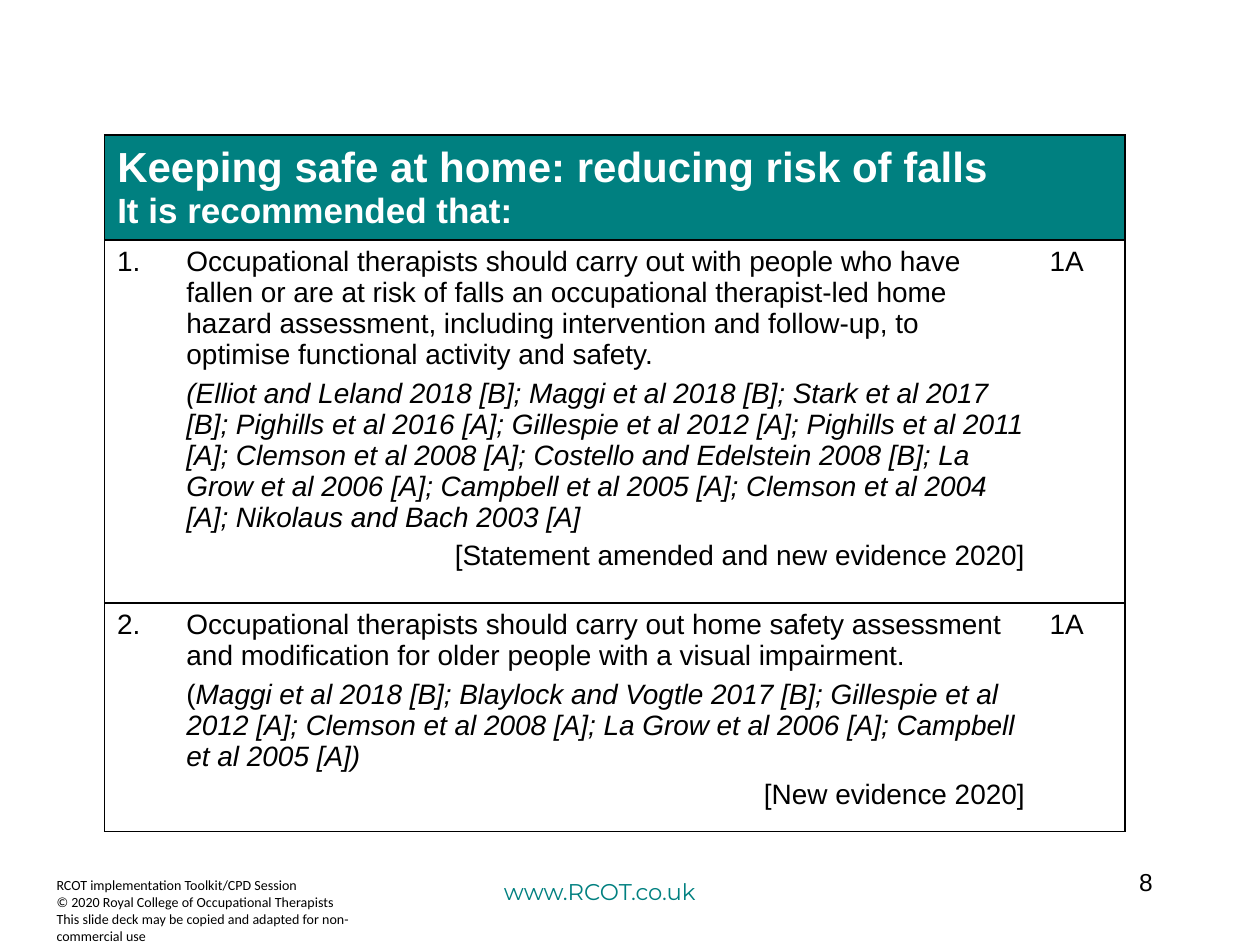
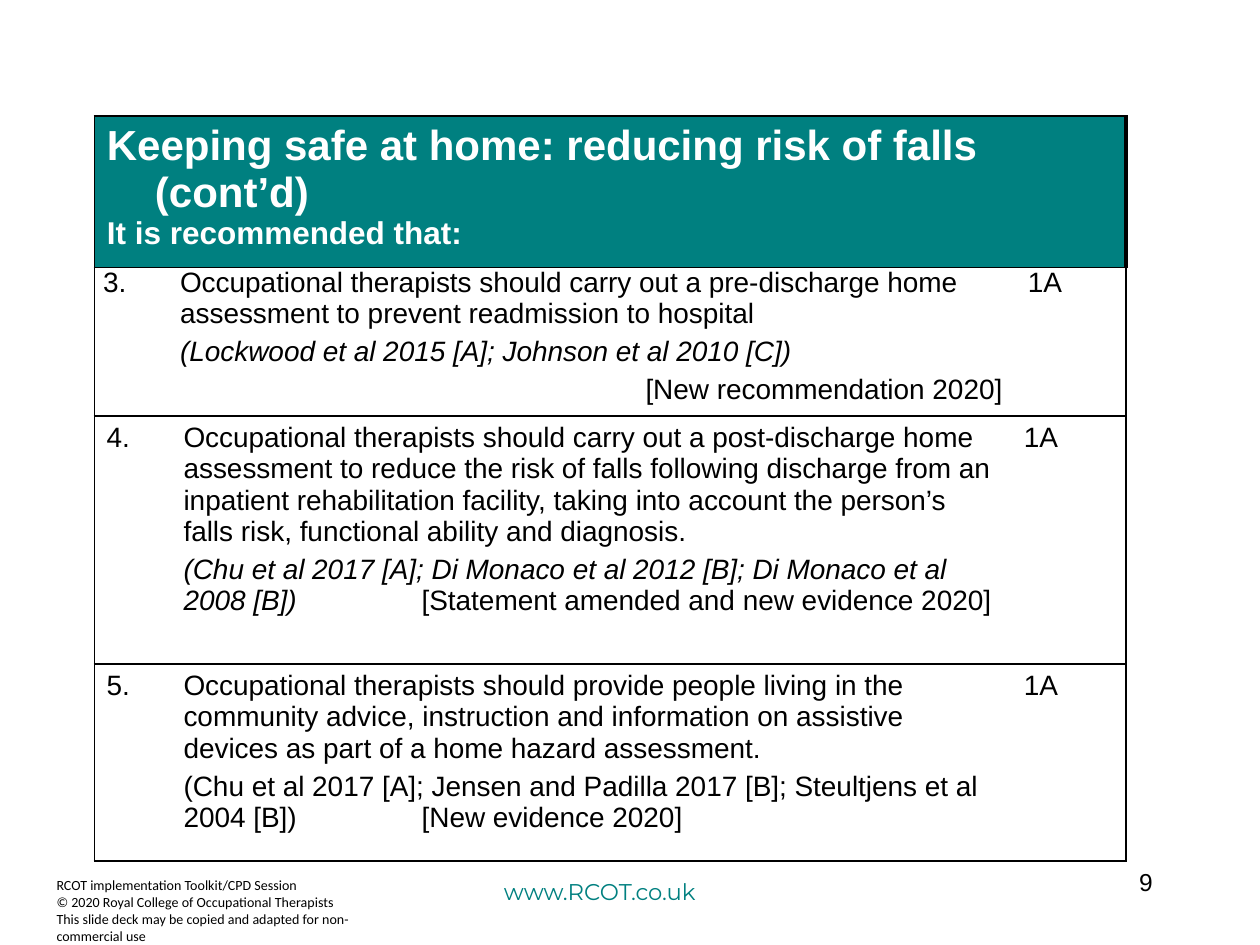
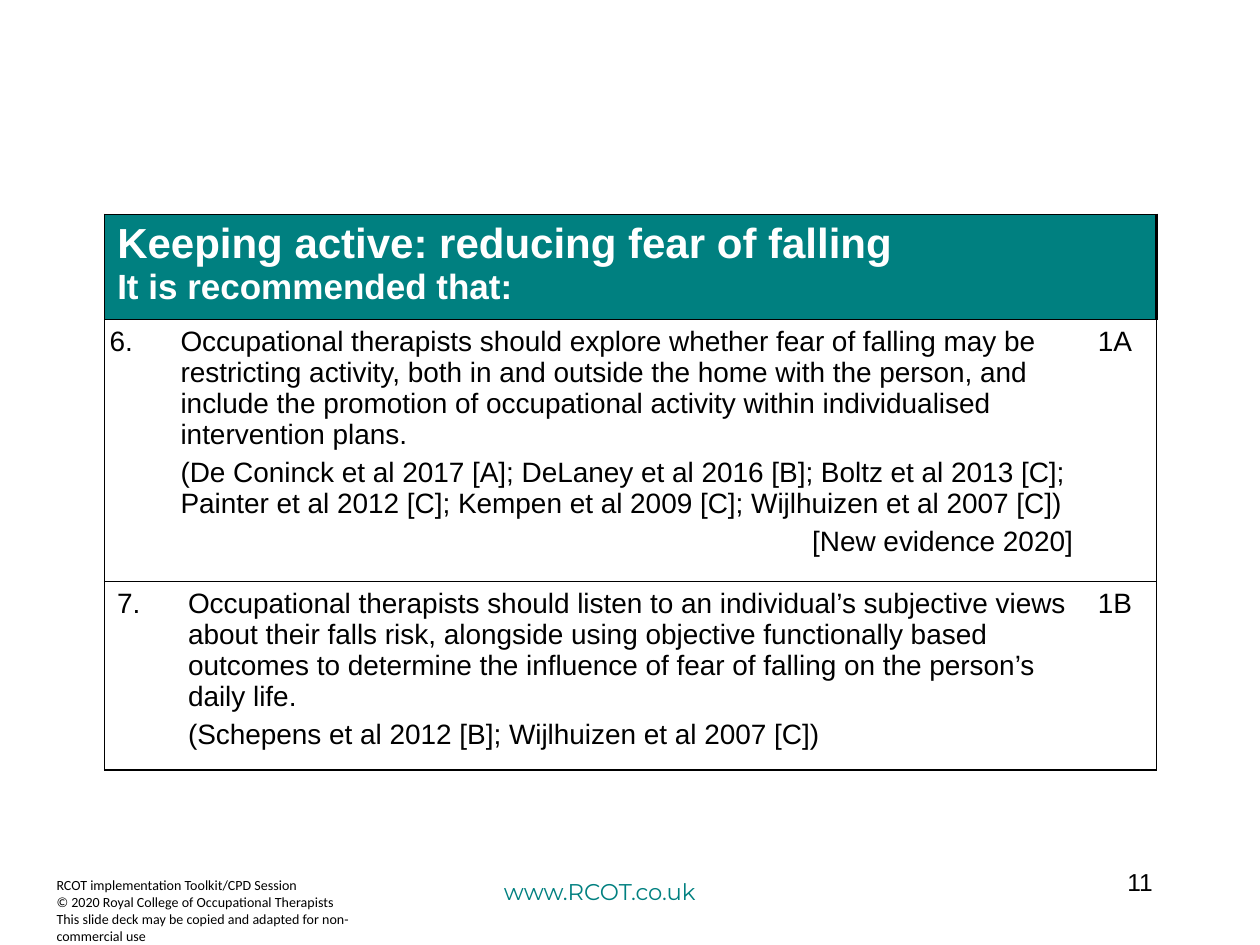
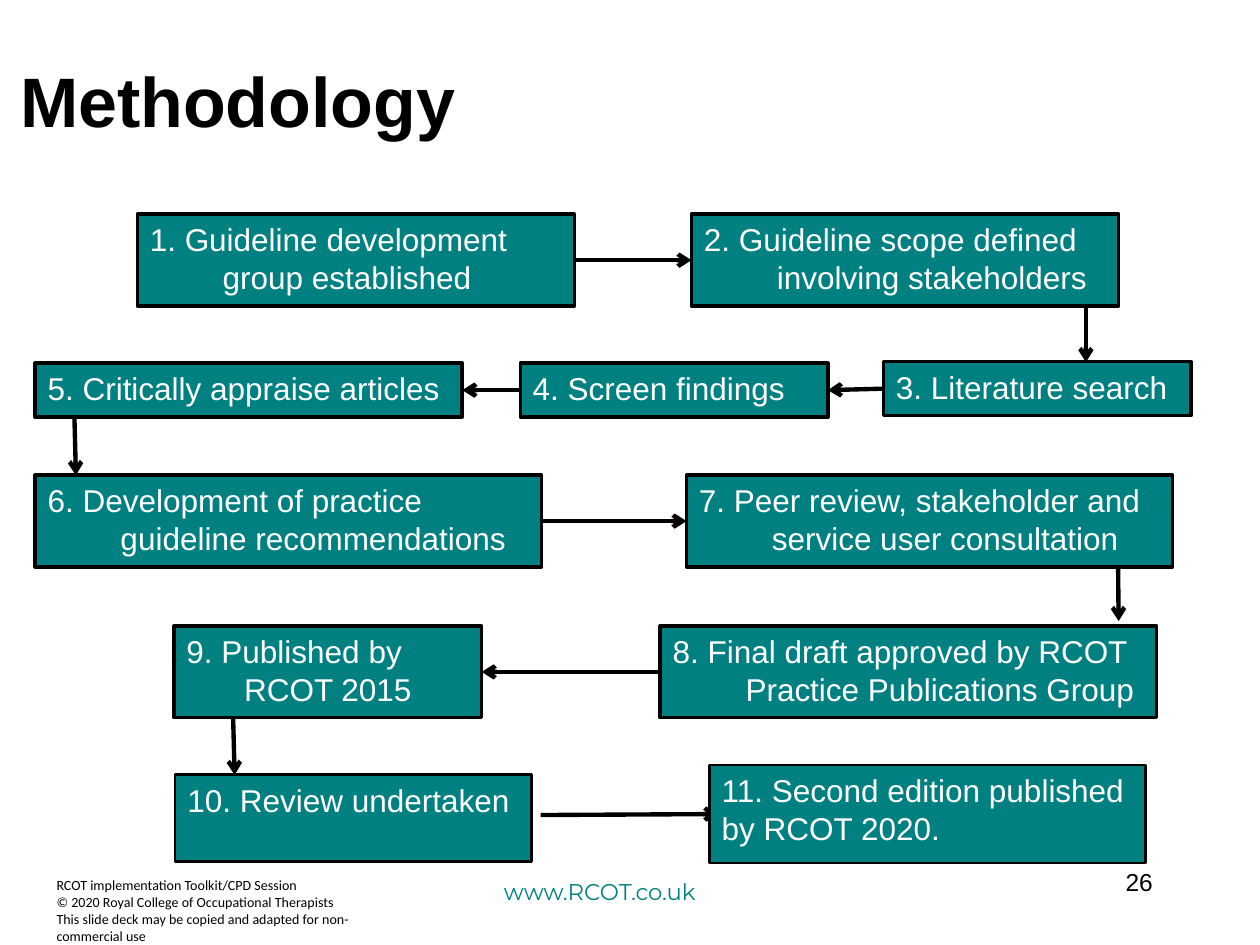
from dataclasses import dataclass

from lxml import etree
from pptx import Presentation
from pptx.dml.color import RGBColor
from pptx.enum.shapes import MSO_CONNECTOR as Connector, MSO_SHAPE as Preset
from pptx.enum.text import MSO_ANCHOR as Anchor, PP_ALIGN as Align
from pptx.oxml.ns import qn
from pptx.util import Cm, Pt


@dataclass(frozen=True)
class Theme:
    teal: RGBColor = RGBColor(0, 128, 128)
    black: RGBColor = RGBColor(0, 0, 0)
    white: RGBColor = RGBColor(255, 255, 255)
    body_font: str = "Arial"
    legal_font: str = "Calibri"
    web_font: str = "Montserrat"
    title_size: float = 40
    heading_size: float = 24
    step_size: float = 18
    body_size: float = 16
    number_size: float = 14
    web_size: float = 13
    legal_size: float = 8
    thin: float = 1
    thick: float = 2.25
    arrow: float = 2.5


THEME = Theme()
TITLE_ONLY, BLANK = 5, 6
LEFT, RIGHT = 1, 3


@dataclass
class Para:
    """Spans are (text, italic) pairs; hang and tab are in centimetres."""
    spans: list
    size: float = THEME.body_size
    align: Align = Align.LEFT
    spacing: float = 0
    hang: float = 0
    tab: float = 0
    bold: bool = False


@dataclass
class Recommendation:
    number: str
    paras: list
    height: float
    grade: str = "1A"
    margins: tuple = (0.25, 0.13, 0.25, 0.13)
    grade_left: float = 0.25
    number_hang: float = 0


def line(text, **style):
    return Para([(text, False)], **style)


def statement(text):
    return line(text, spacing=2)


def citation(*spans, tab=0):
    return Para(list(spans), spacing=2, tab=tab)


def status(text):
    return line(text, spacing=2, align=Align.RIGHT)


def write(frame, paras, color=THEME.black, font=THEME.body_font):
    frame.word_wrap = True
    for index, item in enumerate(paras):
        para = frame.paragraphs[0] if index == 0 else frame.add_paragraph()
        para.alignment = item.align
        if item.spacing:
            para.space_after = Pt(item.spacing)
            if index:
                para.space_before = Pt(item.spacing)
        properties = para._p.get_or_add_pPr()
        if item.hang:
            properties.set("marL", str(Cm(item.hang)))
            properties.set("indent", str(-Cm(item.hang)))
        if item.tab:
            stops = etree.SubElement(properties, qn("a:tabLst"))
            etree.SubElement(stops, qn("a:tab"), pos=str(Cm(item.tab)), algn="l")
        for text, italic in item.spans:
            span = para.add_run()
            span.text = text
            span.font.name = font
            span.font.size = Pt(item.size)
            span.font.bold = item.bold
            span.font.italic = italic
            span.font.color.rgb = color


def add_text(page, place, paras, **style):
    box = page.shapes.add_textbox(*map(Cm, place))
    write(box.text_frame, paras, **style)
    return box


def move_to_master(deck, box):
    shapes = deck.slide_master.shapes
    box._element.nvSpPr.cNvPr.id = shapes._next_shape_id
    shapes._spTree.append(box._element)


def add_footer(deck, page):
    """Put the web address and legal lines on the master, for every slide."""
    web = add_text(page, (9.91, 17.58, 15.49, 1.27),
                   [line("www.RCOT.co.uk", size=THEME.web_size)],
                   color=THEME.teal, font=THEME.web_font)
    legal_lines = ["RCOT implementation Toolkit/CPD Session",
                   "© 2020 Royal College of Occupational Therapists",
                   "This slide deck may be copied and adapted for non-commercial use"]
    legal = add_text(page, (0.89, 17.55, 7.01, 1.5),
                     [line(text, size=THEME.legal_size) for text in legal_lines],
                     font=THEME.legal_font)
    for box in (web, legal):
        move_to_master(deck, box)


def add_page(deck, layout, number):
    page = deck.slides.add_slide(deck.slide_layouts[layout])
    add_text(page, (18.21, 17.35, 5.28, 1.27),
             [line(number, size=THEME.number_size, align=Align.RIGHT)])
    return page


def set_borders(cell, **widths):
    """Draw the sides named L, R, T, B at the given widths and clear the rest."""
    properties = cell._tc.get_or_add_tcPr()
    for side in "LRTB":
        width = widths.get(side, 0)
        border = etree.SubElement(properties, qn(f"a:ln{side}"), w=str(Pt(width)))
        if width:
            fill = etree.SubElement(border, qn("a:solidFill"))
            etree.SubElement(fill, qn("a:srgbClr"), val=str(THEME.black))
        else:
            etree.SubElement(border, qn("a:noFill"))


def set_margins(cell, left, top, right, bottom):
    cell.margin_left, cell.margin_top = Cm(left), Cm(top)
    cell.margin_right, cell.margin_bottom = Cm(right), Cm(bottom)


def add_header_row(table, paras, right_border, anchor):
    cells = list(table.rows[0].cells)
    for cell in cells:
        set_borders(cell, L=THEME.thin, T=THEME.thin, B=THEME.thin, R=right_border)
    cells[0].merge(cells[-1])
    cells[0].fill.solid()
    cells[0].fill.fore_color.rgb = THEME.teal
    cells[0].vertical_anchor = anchor
    write(cells[0].text_frame, paras, color=THEME.white)


def add_recommendation_row(row, item):
    number, text, grade = row.cells
    set_borders(number, L=THEME.thin, T=THEME.thin, B=THEME.thin)
    set_borders(text, T=THEME.thin, B=THEME.thin)
    set_borders(grade, R=THEME.thin, T=THEME.thin, B=THEME.thin)
    for cell in row.cells:
        cell.fill.background()
        set_margins(cell, *item.margins)
    grade.margin_left = Cm(item.grade_left)
    write(number.text_frame, [line(item.number, hang=item.number_hang)])
    write(text.text_frame, item.paras)
    write(grade.text_frame, [line(item.grade)])


def add_recommendations(page, corner, columns, heading, header_height, items,
                        subheading_size=20, hang=0.0,
                        right_border=THEME.thick, anchor=Anchor.TOP):
    heights = [header_height] + [item.height for item in items]
    frame = page.shapes.add_table(len(heights), len(columns), *map(Cm, corner),
                                  Cm(sum(columns)), Cm(sum(heights)))
    table = frame.table
    table.first_row = table.horz_banding = False
    for column, width in zip(table.columns, columns):
        column.width = Cm(width)
    for row, height in zip(table.rows, heights):
        row.height = Cm(height)
    header = [line(heading, size=THEME.heading_size, bold=True, hang=hang),
              line("It is recommended that:", size=subheading_size, bold=True, hang=hang)]
    add_header_row(table, header, right_border, anchor)
    for row, item in zip(list(table.rows)[1:], items):
        add_recommendation_row(row, item)


def add_step(page, place, paras, border=2.0):
    box = page.shapes.add_shape(Preset.RECTANGLE, *map(Cm, place))
    box.shadow.inherit = False
    box.fill.solid()
    box.fill.fore_color.rgb = THEME.teal
    box.line.color.rgb = THEME.black
    box.line.width = Pt(border)
    box.text_frame.vertical_anchor = Anchor.TOP
    write(box.text_frame, paras, color=THEME.white)
    return box


def add_arrow(page, start=(0, 0), end=(0, 0)):
    arrow = page.shapes.add_connector(Connector.STRAIGHT, *map(Cm, start + end))
    arrow.line.color.rgb = THEME.black
    arrow.line.width = Pt(THEME.arrow)
    etree.SubElement(arrow.line._get_or_add_ln(), qn("a:tailEnd"), type="arrow")
    etree.SubElement(arrow._element.spPr, qn("a:effectLst"))
    return arrow


def join(page, source, source_side, target, target_side):
    arrow = add_arrow(page)
    arrow.begin_connect(source, source_side)
    arrow.end_connect(target, target_side)


def build_home_safety(page):
    items = [
        Recommendation("1.", [
            statement("Occupational therapists should carry out with people who have fallen "
                      "or are at risk of falls an occupational therapist-led home hazard "
                      "assessment, including intervention and follow-up, to optimise "
                      "functional activity and safety."),
            citation(("(Elliot and Leland 2018 [B]; Maggi et al 2018 [B]; Stark et al 2017 "
                      "[B]; Pighills et al 2016 [A]; Gillespie et al 2012 [A]; Pighills et "
                      "al 2011 [A]; Clemson et al 2008 [A]; Costello and Edelstein 2008 "
                      "[B]; La Grow et al 2006 [A]; Campbell et al 2005 [A]; Clemson et al "
                      "2004 [A]; Nikolaus and Bach 2003 [A]", True)),
            status("[Statement amended and new evidence 2020]")], 7.32),
        Recommendation("2.", [
            statement("Occupational therapists should carry out home safety assessment and "
                      "modification for older people with a visual impairment."),
            citation(("(", False),
                     ("Maggi et al 2018 [B]; Blaylock and Vogtle 2017 [B]; Gillespie et al "
                      "2012 [A]; Clemson et al 2008 [A]; La Grow et al 2006 [A]; Campbell "
                      "et al 2005 [A])", True)),
            status("[New evidence 2020]")], 4.6),
    ]
    add_recommendations(page, (2.11, 2.72), (1.4, 17.4, 1.77),
                        "Keeping safe at home: reducing risk of falls", 2.11, items,
                        hang=0.97, right_border=THEME.thin, anchor=Anchor.MIDDLE)


def build_home_safety_continued(page):
    status_tab = 4.8
    items = [
        Recommendation("3.", [
            statement("Occupational therapists should carry out a pre-discharge home "
                      "assessment to prevent readmission to hospital"),
            citation(("(Lockwood et al 2015 [A]; Johnson et al 2010 [C])", True)),
            status("[New recommendation 2020]")], 3,
            margins=(0.18, 0, 0.18, 0), grade_left=0.33),
        Recommendation("4.", [
            statement("Occupational therapists should carry out a post-discharge home "
                      "assessment to reduce the risk of falls following discharge from an "
                      "inpatient rehabilitation facility, taking into account the person’s "
                      "falls risk, functional ability and diagnosis."),
            citation(("(Chu et al 2017 [A]; Di Monaco et al 2012 [B]; Di Monaco et al 2008 "
                      "[B])\t", True),
                     ("[Statement amended and new evidence 2020]", False),
                     tab=status_tab)], 5),
        Recommendation("5.", [
            statement("Occupational therapists should provide people living in the "
                      "community advice, instruction and information on assistive devices "
                      "as part of a home hazard assessment."),
            citation(("(Chu et al 2017 [A]; Jensen and Padilla 2017 [B]; Steultjens et al "
                      "2004 [B])\t[New evidence 2020]", False), tab=status_tab)], 3.97),
    ]
    add_recommendations(page, (1.9, 2.34), (1.55, 16.94, 2.31),
                        "Keeping safe at home: reducing risk of falls (cont’d)", 3.02,
                        items, subheading_size=18, hang=0.97)


def build_keeping_active(page):
    items = [
        Recommendation("6.", [
            statement("Occupational therapists should explore whether fear of falling may be "
                      "restricting activity, both in and outside the home with the person, "
                      "and include the promotion of occupational activity within "
                      "individualised intervention plans."),
            citation(("(De Coninck et al 2017 [A]; DeLaney et al 2016 [B]; Boltz et al 2013 "
                      "[C]; Painter et al 2012 [C]; Kempen et al 2009 [C]; Wijlhuizen et al "
                      "2007 [C])", False)),
            status("[New evidence 2020]")], 5.26,
            margins=(0.1, 0.13, 0.25, 0.13), number_hang=1.47),
        Recommendation("7.", [
            statement("Occupational therapists should listen to an individual’s subjective "
                      "views about their falls risk, alongside using objective functionally "
                      "based outcomes to determine the influence of fear of falling on the "
                      "person’s daily life."),
            citation(("(Schepens et al 2012 [B]; Wijlhuizen et al 2007 [C])", False))],
            3.8, grade="1B", number_hang=1.47),
    ]
    add_recommendations(page, (2.11, 4.32), (1.43, 18.34, 1.43),
                        "Keeping active: reducing fear of falling", 2.12, items)


def build_methodology(page):
    title = page.shapes.title
    title.left, title.top, title.width, title.height = map(Cm, (0.15, 0.33, 22.61, 3.35))
    title.text_frame.vertical_anchor = Anchor.MIDDLE
    write(title.text_frame, [line("Methodology", size=THEME.title_size, bold=True)])

    def step(text, hang=1.47, **style):
        return line(text, size=THEME.step_size, hang=hang, **style)

    tall, low = 1.85, 1.09
    places = {
        1: (2.77, 4.32, 8.81, tall), 2: (13.94, 4.32, 8.61, tall),
        3: (17.81, 7.29, 6.2, low), 4: (10.49, 7.32, 6.2, low),
        5: (0.71, 7.32, 8.61, low), 6: (0.71, 9.58, 10.21, tall),
        7: (13.84, 9.58, 9.8, tall), 8: (13.31, 12.62, 10.01, tall),
        9: (3.51, 12.62, 6.2, tall),
    }
    wording = {
        1: [step("1. Guideline development group established")],
        2: [step("2. Guideline scope defined involving stakeholders")],
        3: [step("3. Literature search", hang=0)],
        4: [step("4. Screen findings", hang=0)],
        5: [step("5. Critically appraise articles", hang=0)],
        6: [step("6. Development of practice guideline recommendations")],
        7: [step("7. Peer review, stakeholder and service user consultation")],
        8: [step("8. Final draft approved by RCOT Practice Publications Group")],
        9: [step("9. Published by"), step("RCOT 2015", align=Align.CENTER)],
    }
    boxes = {key: add_step(page, place, wording[key]) for key, place in places.items()}

    for source, target in ((1, 2), (6, 7)):
        join(page, boxes[source], RIGHT, boxes[target], LEFT)
    for source, target in ((3, 4), (4, 5), (8, 9)):
        join(page, boxes[source], LEFT, boxes[target], RIGHT)
    for start, end in (((21.89, 6.17), (21.89, 7.3)), ((1.5, 8.41), (1.53, 9.58)),
                       ((22.54, 11.43), (22.55, 12.52)), ((4.7, 14.48), (4.73, 15.62))):
        add_arrow(page, start, end)

    add_step(page, (3.53, 15.62, 7.19, 1.75), [step("10. Review undertaken", hang=0)], 1.5)
    add_arrow(page, (10.9, 16.43), (14.48, 16.41))
    add_step(page, (14.3, 15.42, 8.79, 1.98),
             [step("11. Second edition published by RCOT 2020.", hang=0)], 1.5)


def main():
    deck = Presentation()
    deck.slide_width, deck.slide_height = Cm(25.4), Cm(19.05)
    pages = (("8", BLANK, build_home_safety),
             ("9", BLANK, build_home_safety_continued),
             ("11", BLANK, build_keeping_active),
             ("26", TITLE_ONLY, build_methodology))
    for number, layout, build in pages:
        build(add_page(deck, layout, number))
    add_footer(deck, deck.slides[0])
    deck.save("out.pptx")


if __name__ == "__main__":
    main()
